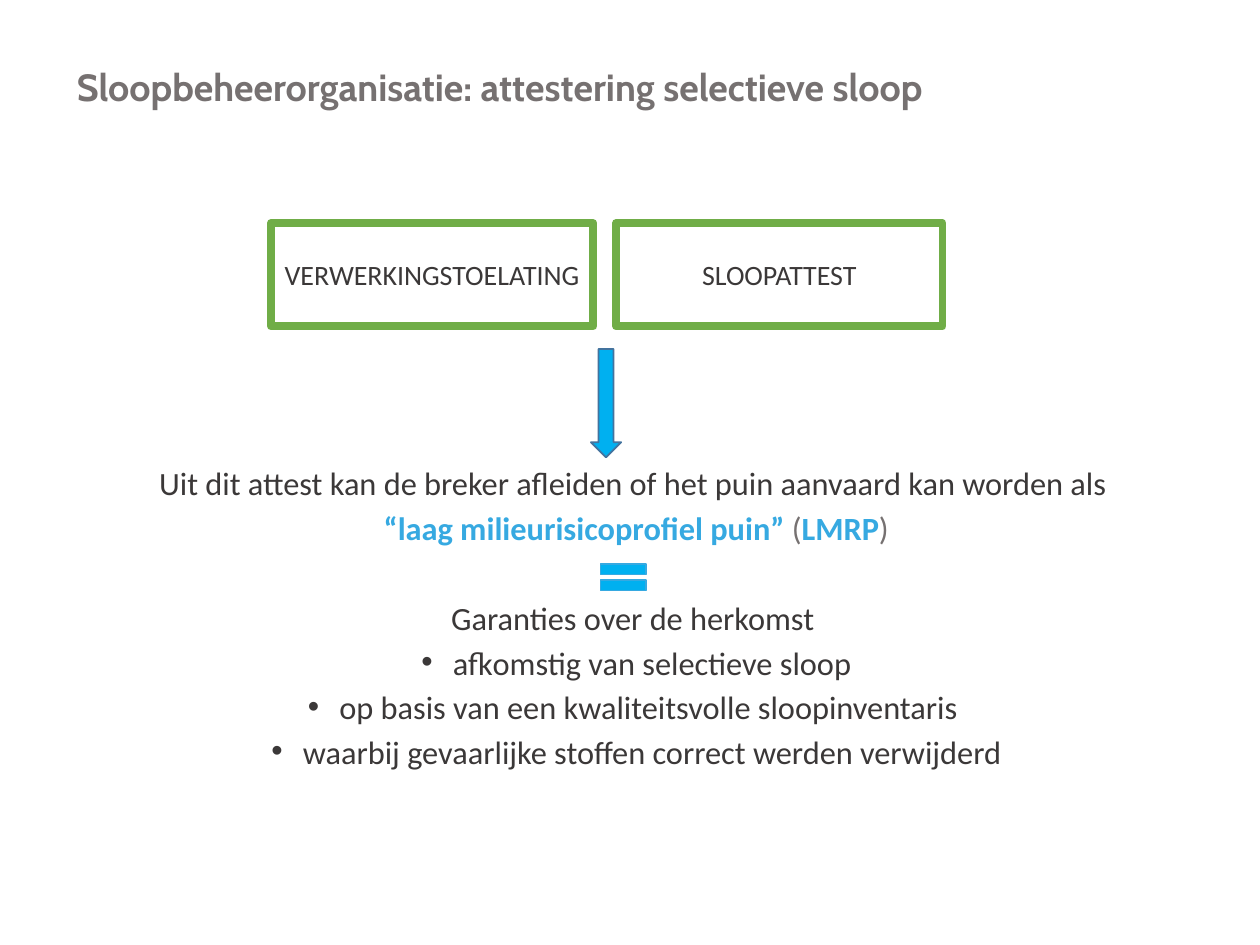
from dataclasses import dataclass

from lxml import etree
from pptx import Presentation
from pptx.dml.color import RGBColor
from pptx.enum.shapes import MSO_SHAPE
from pptx.enum.text import MSO_ANCHOR, MSO_AUTO_SIZE, PP_ALIGN
from pptx.oxml.ns import qn
from pptx.shapes.autoshape import Shape
from pptx.slide import Slide
from pptx.util import Inches, Pt

RECTANGLE = MSO_SHAPE.RECTANGLE
DOWN_ARROW = MSO_SHAPE.DOWN_ARROW
EQUAL_SIGN = MSO_SHAPE.MATH_EQUAL
CENTER = PP_ALIGN.CENTER
LEFT = PP_ALIGN.LEFT
MIDDLE = MSO_ANCHOR.MIDDLE
NO_AUTO_SIZE = MSO_AUTO_SIZE.NONE

WHITE = RGBColor(0xFF, 0xFF, 0xFF)
GREEN = RGBColor(0x70, 0xAD, 0x47)
BLUE = RGBColor(0x00, 0xB0, 0xF0)
LIGHT_BLUE = RGBColor(0x36, 0xA9, 0xE1)
DARK_BLUE = RGBColor(0x43, 0x73, 0x9E)
GRAY = RGBColor(0x76, 0x71, 0x71)
DARK_GRAY = RGBColor(0x3B, 0x38, 0x38)

TITLE_FONT = "Cabin"
BODY_FONT = "Calibri"


@dataclass
class Figure:
    kind: MSO_SHAPE
    left: float
    top: float
    width: float
    height: float
    fill: RGBColor
    line: RGBColor
    line_width: float
    label: str = ""
    rotation: float = 0


@dataclass
class Line:
    text: str
    space_before: float = 10
    bullet: bool = False
    highlighted: bool = False


FIGURES = [
    Figure(RECTANGLE, 2.15, 1.77, 2.56, 0.82, WHITE, GREEN, 4.5, "VERWERKINGSTOELATING"),
    Figure(RECTANGLE, 4.89, 1.77, 2.59, 0.82, WHITE, GREEN, 4.5, "SLOOPATTEST"),
    Figure(DOWN_ARROW, 4.69, 2.77, 0.24, 0.86, BLUE, DARK_BLUE, 1),
    Figure(EQUAL_SIGN, 4.7, 4.4, 0.49, 0.36, BLUE, LIGHT_BLUE, 1, rotation=180),
]

# In a highlighted line, "|" separates emphasised and plain parts in turn.
LINES = [
    Line("Uit dit attest kan de breker afleiden of het puin aanvaard kan worden als ", 0),
    Line("“laag milieurisicoprofiel puin” |(|LMRP|)", highlighted=True),
    Line("Garanties over de herkomst ", 36),
    Line("afkomstig van selectieve sloop", bullet=True),
    Line("op basis van een kwaliteitsvolle sloopinventaris ", bullet=True),
    Line("waarbij gevaarlijke stoffen correct werden verwijderd", bullet=True),
]


def add_title(slide: Slide, text: str) -> None:
    title = slide.shapes.title
    title.left, title.top = Inches(0.51), Inches(0.36)
    title.width, title.height = Inches(8.36), Inches(0.7)
    frame = title.text_frame
    frame.text = text
    frame.auto_size = NO_AUTO_SIZE
    frame.vertical_anchor = MIDDLE
    paragraph = frame.paragraphs[0]
    paragraph.alignment = LEFT
    paragraph.line_spacing = 0.9
    font = paragraph.font
    font.name, font.size, font.bold = TITLE_FONT, Pt(21.6), True
    font.color.rgb = GRAY


def add_figure(slide: Slide, figure: Figure) -> Shape:
    shape = slide.shapes.add_shape(
        figure.kind, Inches(figure.left), Inches(figure.top),
        Inches(figure.width), Inches(figure.height))
    shape.shadow.inherit = False
    shape.rotation = figure.rotation
    shape.fill.solid()
    shape.fill.fore_color.rgb = figure.fill
    shape.line.color.rgb = figure.line
    shape.line.width = Pt(figure.line_width)
    if figure.label:
        frame = shape.text_frame
        frame.text = figure.label
        frame.vertical_anchor = MIDDLE
        paragraph = frame.paragraphs[0]
        paragraph.alignment = CENTER
        paragraph.font.name, paragraph.font.size = BODY_FONT, Pt(16)
        paragraph.font.color.rgb = DARK_GRAY
    return shape


def add_explanation(slide: Slide, lines: list[Line]) -> None:
    box = slide.shapes.add_textbox(Inches(0.45), Inches(3.71), Inches(9.2), Inches(2.58))
    frame = box.text_frame
    frame.word_wrap = True
    for index, line in enumerate(lines):
        paragraph = frame.add_paragraph() if index else frame.paragraphs[0]
        if line.bullet:
            properties = paragraph._p.get_or_add_pPr()
            properties.set("marL", str(Inches(0.25)))
            properties.set("indent", str(-Inches(0.25)))
            etree.SubElement(properties, qn("a:buFont"), typeface="Arial")
            etree.SubElement(properties, qn("a:buChar"), char="•")
        paragraph.alignment = CENTER
        paragraph.line_spacing = 0.7
        paragraph.space_before = Pt(line.space_before)
        paragraph.font.name, paragraph.font.size = BODY_FONT, Pt(18.5)
        paragraph.font.color.rgb = DARK_GRAY
        parts = line.text.split("|") if line.highlighted else [line.text]
        for position, part in enumerate(parts):
            run = paragraph.add_run()
            run.text = part
            if line.highlighted:
                emphasised = position % 2 == 0
                run.font.bold = emphasised
                run.font.color.rgb = LIGHT_BLUE if emphasised else GRAY


def main() -> None:
    presentation = Presentation()
    presentation.slide_width, presentation.slide_height = Inches(10), Inches(7.5)
    slide = presentation.slides.add_slide(presentation.slide_layouts[5])
    add_title(slide, "Sloopbeheerorganisatie: attestering selectieve sloop")
    add_explanation(slide, LINES)
    for figure in FIGURES:
        add_figure(slide, figure)
    presentation.save("out.pptx")


if __name__ == "__main__":
    main()
